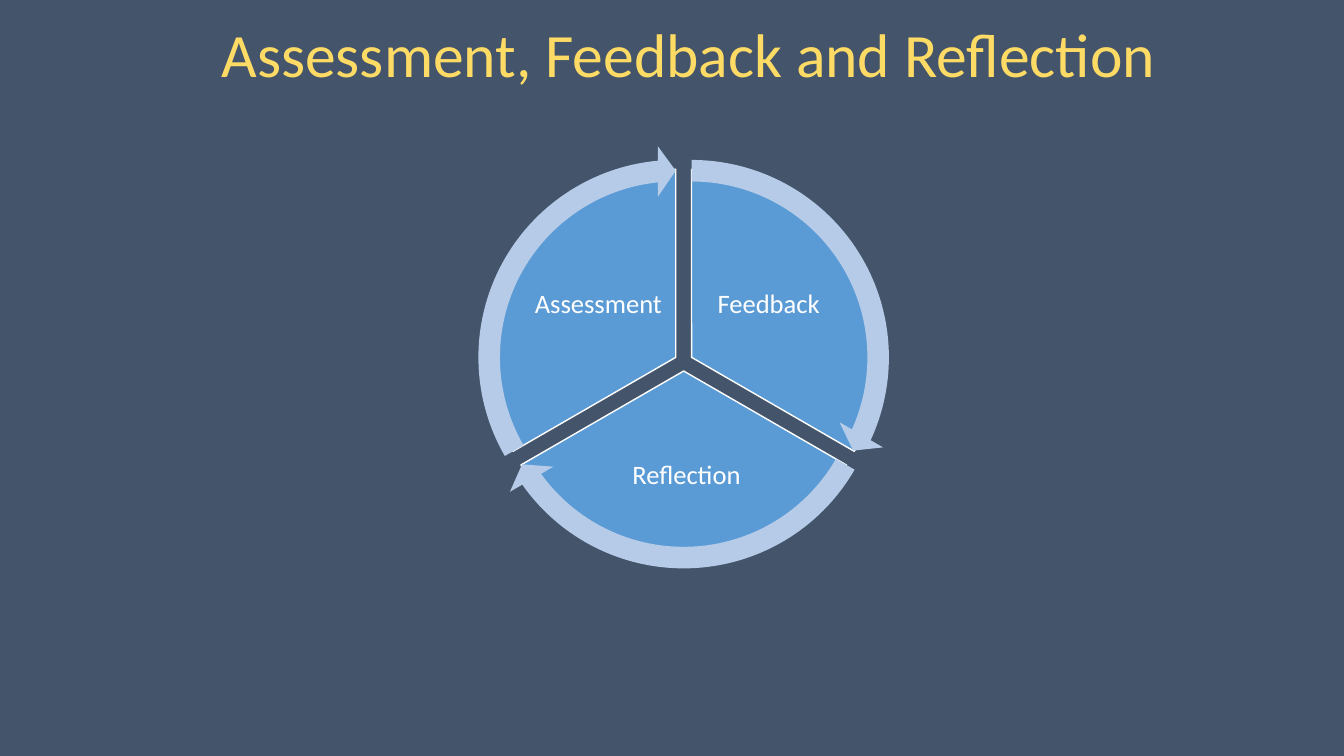
from dataclasses import dataclass
from math import cos, radians, sin

from pptx import Presentation
from pptx.dml.color import RGBColor
from pptx.enum.shapes import MSO_SHAPE
from pptx.enum.text import MSO_ANCHOR, MSO_AUTO_SIZE, PP_ALIGN
from pptx.shapes.autoshape import Shape
from pptx.slide import Slide
from pptx.util import Cm, Pt

COLOURS = {
    "background": "44546A",
    "title": "FEDB65",
    "slice": "5B9BD5",
    "arrow": "B5CBE7",
    "white": "FFFFFF",
}
FONT = "Calibri"
CENTRE_X, CENTRE_Y = 17.23, 9.12
SLICE_SIZE, ARROW_SIZE = 9.47, 10.67
SLICE_SHIFT = 0.23
SWEEP = 120
ARROW_HEAD_ANGLE = 5.46
ARROW_THICKNESS, ARROW_HEAD_WIDTH = 5.09 / 100, 5.93 / 100
ADJ_PER_DEGREE = 0.6


@dataclass(frozen=True)
class Stage:
    label: str
    start: int
    left: float
    top: float
    width: float
    height: float

    @property
    def end(self) -> int:
        return (self.start + SWEEP) % 360


STAGES = [
    Stage("Feedback", 270, 17.68, 6.27, 3.38, 2.82),
    Stage("Reflection", 30, 14.76, 10.74, 5.08, 2.49),
    Stage("Assessment", 150, 13.39, 6.27, 3.38, 2.82),
]


def colour(name: str) -> RGBColor:
    return RGBColor.from_string(COLOURS[name])


def set_text(sp: Shape, text: str, size: float, colour_name: str,
             frame_format: dict, line_spacing: float = 1.0) -> None:
    tf = sp.text_frame
    for name, value in frame_format.items():
        setattr(tf, name, value)
    p = tf.paragraphs[0]
    p.alignment = PP_ALIGN.CENTER
    p.line_spacing = line_spacing
    r = p.add_run()
    r.text = text
    for name, value in {"name": FONT, "size": Pt(size)}.items():
        setattr(r.font, name, value)
    r.font.color.rgb = colour(colour_name)


def add_round_shape(s: Slide, stage: Stage, kind: MSO_SHAPE, size: float,
                    fill: str, adjustments: list[float]) -> Shape:
    """Add a shape centred on the cycle, pushed outwards along its stage."""
    middle = radians(stage.start + SWEEP / 2)
    x = CENTRE_X + SLICE_SHIFT * cos(middle) - size / 2
    y = CENTRE_Y + SLICE_SHIFT * sin(middle) - size / 2
    sp = s.shapes.add_shape(kind, Cm(x), Cm(y), Cm(size), Cm(size))
    for i, value in enumerate(adjustments):
        sp.adjustments[i] = value
    sp.shadow.inherit = False
    sp.fill.solid()
    sp.fill.fore_color.rgb = colour(fill)
    return sp


def add_slice(s: Slide, stage: Stage) -> None:
    angles = [stage.start * ADJ_PER_DEGREE, stage.end * ADJ_PER_DEGREE]
    sp = add_round_shape(s, stage, MSO_SHAPE.PIE, SLICE_SIZE, "slice", angles)
    sp.line.color.rgb = colour("white")
    sp.line.width = Pt(1)


def add_label(s: Slide, stage: Stage) -> None:
    box = s.shapes.add_textbox(Cm(stage.left), Cm(stage.top),
                               Cm(stage.width), Cm(stage.height))
    margins = {f"margin_{side}": Cm(0.08)
               for side in ("left", "top", "right", "bottom")}
    set_text(box, stage.label, 19, "white",
             {"word_wrap": True, "vertical_anchor": MSO_ANCHOR.MIDDLE, **margins},
             line_spacing=0.9)


def add_arrow(s: Slide, stage: Stage) -> None:
    adjustments = [
        ARROW_THICKNESS,
        ARROW_HEAD_ANGLE * ADJ_PER_DEGREE,
        (stage.end - ARROW_HEAD_ANGLE) * ADJ_PER_DEGREE,
        stage.start * ADJ_PER_DEGREE,
        ARROW_HEAD_WIDTH,
    ]
    sp = add_round_shape(s, stage, MSO_SHAPE.CIRCULAR_ARROW, ARROW_SIZE,
                         "arrow", adjustments)
    sp.line.fill.background()


def add_title(s: Slide, text: str) -> None:
    title = s.shapes.title
    place = {"left": Cm(2.34), "top": Cm(0.28), "width": Cm(30.05), "height": Cm(2.13)}
    for name, value in place.items():
        setattr(title, name, value)
    set_text(title, text, 44, "title",
             {"word_wrap": True, "vertical_anchor": MSO_ANCHOR.TOP,
              "auto_size": MSO_AUTO_SIZE.SHAPE_TO_FIT_TEXT})


def main() -> None:
    prs = Presentation()
    prs.slide_width, prs.slide_height = Cm(33.87), Cm(19.05)
    s = prs.slides.add_slide(prs.slide_layouts[5])
    s.background.fill.solid()
    s.background.fill.fore_color.rgb = colour("background")
    add_title(s, "Assessment, Feedback and Reflection")
    for stage in STAGES:
        add_slice(s, stage)
        add_label(s, stage)
    for stage in STAGES:
        add_arrow(s, stage)
    prs.save("out.pptx")


if __name__ == "__main__":
    main()
